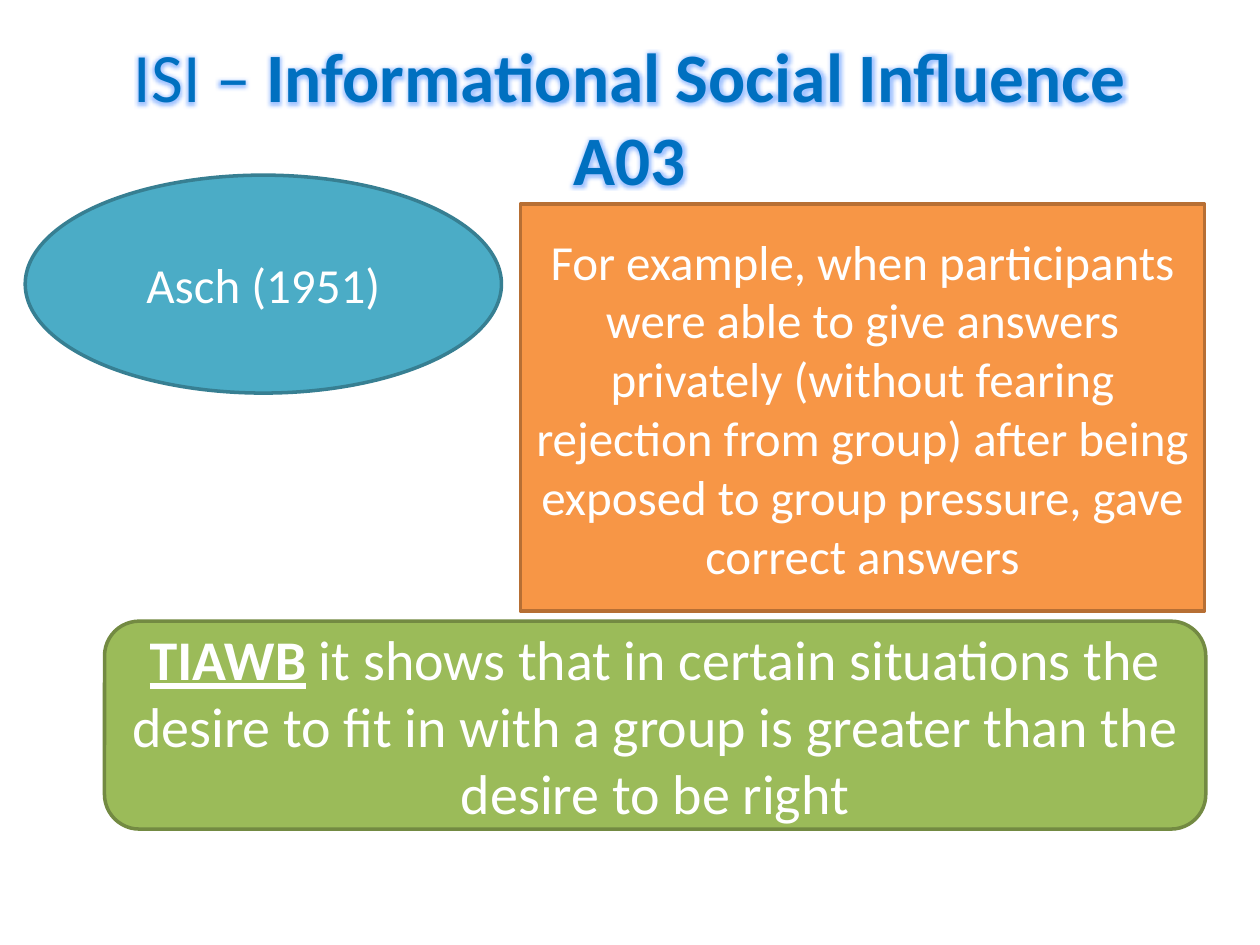
"""Build a slide on informational social influence with three coloured panels."""
from lxml import etree
from pptx import Presentation
from pptx.dml.color import RGBColor
from pptx.enum.shapes import MSO_SHAPE
from pptx.enum.text import MSO_ANCHOR, PP_ALIGN
from pptx.oxml import parse_xml
from pptx.oxml.ns import nsdecls, qn
from pptx.util import Inches, Pt

OVAL, RECTANGLE, ROUNDED = MSO_SHAPE.OVAL, MSO_SHAPE.RECTANGLE, MSO_SHAPE.ROUNDED_RECTANGLE
CENTER, MIDDLE = PP_ALIGN.CENTER, MSO_ANCHOR.MIDDLE
COLORS = {
    "title": "0070C0", "glow": "A3C4FF", "text": "FFFFFF",
    "teal": "4BACC6", "teal line": "377F92",
    "green": "9BBB59", "green line": "738A42",
    "orange": "F79646", "orange line": "B76F34",
}
FONT = "Calibri"
WIDTH, HEIGHT = Inches(10), Inches(7.5)
TITLE_TEXT = [("ISI – ", False), ("Informational Social Influence", True), ("A03", True)]
PANELS = [
    (OVAL, (0.2, 1.39, 3.78, 1.73), "teal", 28, "", "Asch (1951)"),
    (ROUNDED, (0.83, 4.93, 8.74, 1.65), "green", 32, "TIAWB",
     " it shows that in certain situations the desire to fit in with a group "
     "is greater than the desire to be right"),
    (RECTANGLE, (4.13, 1.62, 5.43, 3.23), "orange", 28, "",
     "For example, when participants were able to give answers privately "
     "(without fearing rejection from group) after being exposed to group "
     "pressure, gave correct answers"),
]


def place(shape, box):
    shape.left, shape.top, shape.width, shape.height = [Inches(length) for length in box]
    shape.text_frame.word_wrap = True
    shape.text_frame.vertical_anchor = MIDDLE


def style(paragraph, size, color):
    paragraph.alignment = CENTER
    paragraph.font.name = FONT
    paragraph.font.size = Pt(size)
    paragraph.font.color.rgb = RGBColor.from_string(COLORS[color])


presentation = Presentation()
presentation.slide_width, presentation.slide_height = WIDTH, HEIGHT
slide = presentation.slides.add_slide(presentation.slide_layouts[5])

title = slide.shapes.title
place(title, (0.5, 0.3, 9, 1.25))
paragraph = title.text_frame.paragraphs[0]
style(paragraph, 39.6, "title")
for text, bold in TITLE_TEXT:
    if text == "A03":
        paragraph.add_line_break()
    run = paragraph.add_run()
    run.text = text
    run.font.bold = bold
    run.font.color.rgb = RGBColor.from_string(COLORS["title"])
    effects = parse_xml(f'<a:effectLst {nsdecls("a")}/>')
    glow = etree.SubElement(effects, qn("a:glow"), rad=str(Pt(6)))
    etree.SubElement(glow, qn("a:srgbClr"), val=COLORS["glow"])
    run.font.fill
    run._r.get_or_add_rPr().find(qn("a:solidFill")).addnext(effects)

for kind, box, color, size, lead, body in PANELS:
    panel = slide.shapes.add_shape(kind, 0, 0, 0, 0)
    place(panel, box)
    panel.shadow.inherit = False
    panel.fill.solid()
    panel.fill.fore_color.rgb = RGBColor.from_string(COLORS[color])
    panel.line.color.rgb = RGBColor.from_string(COLORS[color + " line"])
    panel.line.width = Pt(2)
    paragraph = panel.text_frame.paragraphs[0]
    style(paragraph, size, "text")
    if lead:
        run = paragraph.add_run()
        run.text = lead
        run.font.bold = run.font.underline = True
    paragraph.add_run().text = body

presentation.save("out.pptx")
